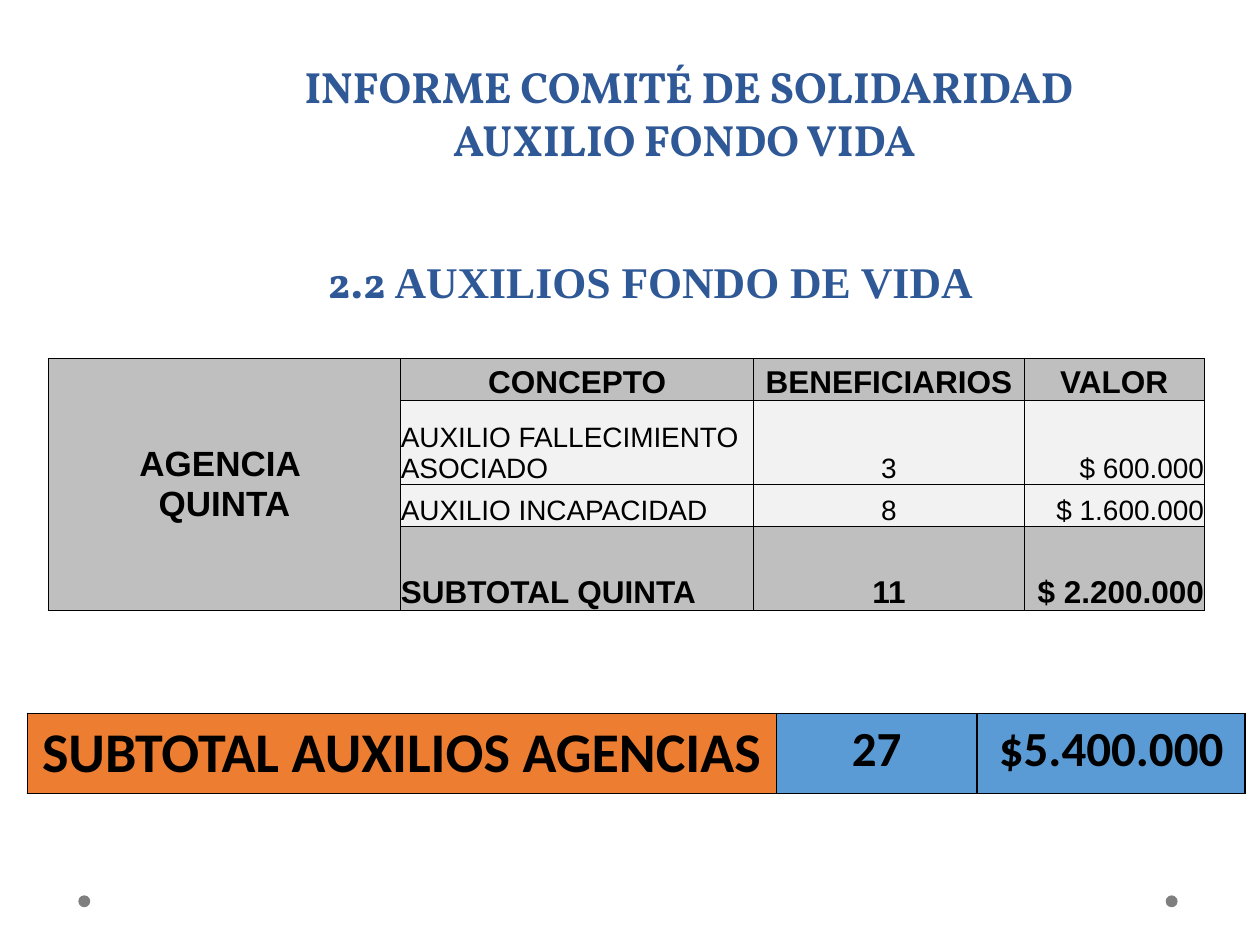
from pptx import Presentation
from pptx.dml.color import RGBColor
from pptx.enum.shapes import MSO_SHAPE as Shape
from pptx.enum.text import MSO_ANCHOR as Anchor, MSO_AUTO_SIZE as Auto, PP_ALIGN as Align
from pptx.util import Cm, Pt
from lxml.etree import SubElement
from pptx.oxml.ns import qn

BLUE = RGBColor(0x2F, 0x58, 0x97)
BLACK = RGBColor(0, 0, 0)
DOT = RGBColor(0x7F, 0x7F, 0x7F)
GRAY = RGBColor(0xBF, 0xBF, 0xBF)
PALE = RGBColor(0xF2, 0xF2, 0xF2)
ORANGE = RGBColor(0xED, 0x7D, 0x31)
SKY = RGBColor(0x5B, 0x9B, 0xD5)
SIDES = (Align.LEFT, Align.CENTER, Align.RIGHT)


def style(font, name, size, color=BLACK, bold=True):
    """Set the look of a font."""
    font.name, font.size, font.bold = name, Pt(size), bold
    font.color.rgb = color


def add_title(slide):
    """Fill and place the title."""
    title = slide.shapes.title
    title.left, title.top, title.width, title.height = Cm(2.54), Cm(1.93), Cm(22.86), Cm(1.52)
    frame = title.text_frame
    frame.text = "INFORME COMITÉ DE SOLIDARIDAD \vAUXILIO FONDO VIDA  "
    frame.auto_size, frame.vertical_anchor = Auto.NONE, Anchor.BOTTOM
    para = frame.paragraphs[0]
    para.alignment = Align.CENTER
    for run in para.runs:
        style(run.font, "Vollkorn", 25, BLUE)


def add_head(slide):
    """Add the section heading."""
    box = slide.shapes.add_textbox(Cm(1.5), Cm(5.33), Cm(23.22), Cm(0.69))
    frame = box.text_frame
    frame.word_wrap, frame.vertical_anchor = True, Anchor.MIDDLE
    para = frame.paragraphs[0]
    para.alignment = Align.CENTER
    for text, name in (("2.2 ", "Vollkorn"), ("AUXILIOS FONDO DE VIDA", "Times New Roman")):
        run = para.add_run()
        run.text = text
        style(run.font, name, 25, BLUE)


def add_grid(slide, left, top, cols, rows, line):
    """Add a table with black borders and return it."""
    shape = slide.shapes.add_table(len(rows), len(cols), Cm(left), Cm(top),
                                   Cm(sum(cols)), Cm(sum(rows)))
    table = shape.table
    for col, width in zip(table.columns, cols):
        col.width = Cm(width)
    for row, height in zip(table.rows, rows):
        row.height = Cm(height)
    for cell in table.iter_cells():
        props = cell._tc.get_or_add_tcPr()
        for side in ("a:lnL", "a:lnR", "a:lnT", "a:lnB"):
            edge = SubElement(props, qn(side), w=str(Pt(line)))
            SubElement(SubElement(edge, qn("a:solidFill")), qn("a:srgbClr"), val=str(BLACK))
    return table


def fill_cell(cell, text, fill, name, size, bold=True, align=Align.CENTER):
    """Write and color one cell."""
    cell.fill.solid()
    cell.fill.fore_color.rgb = fill
    cell.text = text
    for para in cell.text_frame.paragraphs:
        para.alignment = align
        style(para.font, name, size, BLACK, bold)


def add_agency(slide):
    """Add the table of aid paid by the agency."""
    data = [
        ("CONCEPTO", "BENEFICIARIOS", "VALOR"),
        ("AUXILIO FALLECIMIENTO ASOCIADO", "3", "$ 600.000"),
        ("AUXILIO INCAPACIDAD", "8", "$ 1.600.000"),
        ("SUBTOTAL QUINTA", "11", "$ 2.200.000"),
    ]
    table = add_grid(slide, 0.97, 7.22, (7.11, 7.11, 5.46, 3.62), (0.85, 1.69, 0.85, 1.57), 0.5)
    for cell in table.iter_cells():
        cell.margin_left = cell.margin_right = cell.margin_top = cell.margin_bottom = 0
        cell.vertical_anchor = Anchor.BOTTOM
    side = table.cell(0, 0)
    side.merge(table.cell(3, 0))
    fill_cell(side, "AGENCIA \nQUINTA", GRAY, "Arial", 20)
    side.vertical_anchor = Anchor.MIDDLE
    for r, texts in enumerate(data):
        bold = r in (0, 3)
        for c, text in enumerate(texts):
            fill_cell(table.cell(r, c + 1), text, GRAY if bold else PALE, "Arial",
                      18 if bold else 16, bold, SIDES[c] if r else Align.CENTER)


def add_total(slide):
    """Add the subtotal of all agencies."""
    table = add_grid(slide, 0.55, 14.38, (15.1, 4.05, 5.4), (1.62,), 1)
    data = (("SUBTOTAL AUXILIOS AGENCIAS", ORANGE, 32), ("27", SKY, 28), ("$5.400.000", SKY, 28))
    for cell, (text, fill, size) in zip(table.iter_cells(), data):
        fill_cell(cell, text, fill, "Calibri", size)


def add_dot(slide, left):
    """Add a small gray dot at the foot."""
    dot = slide.shapes.add_shape(Shape.OVAL, Cm(left), Cm(18.05), Cm(0.24), Cm(0.24))
    dot.shadow.inherit = False
    dot.fill.solid()
    dot.fill.fore_color.rgb = DOT
    dot.line.fill.background()


def main():
    """Build and save the slide."""
    deck = Presentation()
    deck.slide_width, deck.slide_height = Cm(25.4), Cm(19.05)
    slide = deck.slides.add_slide(deck.slide_layouts[5])
    for left in (23.5, 1.58):
        add_dot(slide, left)
    add_title(slide)
    add_head(slide)
    add_agency(slide)
    add_total(slide)
    deck.save("out.pptx")


if __name__ == "__main__":
    main()
